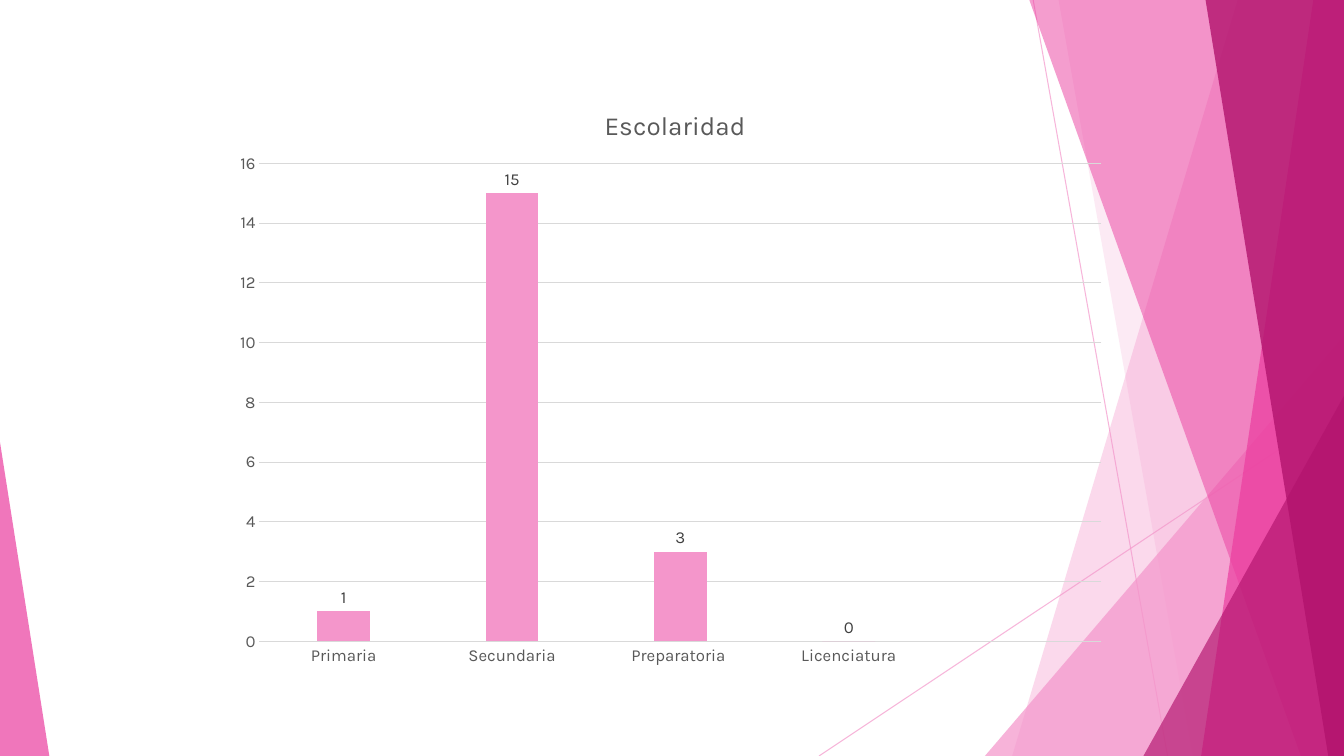
"""Build the Escolaridad column chart slide with its pink facet decoration."""
from dataclasses import dataclass

from lxml.etree import SubElement
from pptx import Presentation
from pptx.chart.chart import Chart
from pptx.chart.data import CategoryChartData
from pptx.dml.color import RGBColor
from pptx.enum.chart import XL_CHART_TYPE, XL_LABEL_POSITION, XL_TICK_MARK
from pptx.enum.shapes import MSO_CONNECTOR, MSO_SHAPE
from pptx.oxml.ns import qn
from pptx.oxml.xmlchemy import BaseOxmlElement
from pptx.shapes.autoshape import Shape
from pptx.slide import Slide
from pptx.text.text import Font
from pptx.util import Emu, Pt

WIDTH, HEIGHT = 1280, 720


@dataclass(frozen=True)
class Theme:
    font: str = "Karla"
    light: str = "F496CB"
    bright: str = "EB3D9F"
    deep: str = "B2136D"
    grid: str = "D9D9D9"
    axis_text: str = "595959"
    value_text: str = "404040"
    title_size: float = 18.6
    label_size: float = 12
    line_width: float = 0.75


THEME = Theme()


@dataclass(frozen=True)
class Ray:
    start: tuple[int, int]
    end: tuple[int, int]


@dataclass(frozen=True)
class Facet:
    top: int
    bottom: int
    color: str
    opacity: int


@dataclass(frozen=True)
class Triangle:
    left: int
    top: int
    width: int
    apex: float
    color: str
    opacity: int


RAYS = [Ray((984, 0), (1112, HEIGHT)), Ray((WIDTH, 387), (780, HEIGHT))]
RAY_OPACITY = 70
FACETS = [
    Facet(1179, 964, THEME.light, 36),
    Facet(1008, 1136, THEME.light, 20),
    Triangle(938, 320, 342, 1, THEME.light, 72),
    Facet(980, 1239, THEME.bright, 50),
    Facet(1251, 1144, THEME.bright, 70),
    Facet(1148, 1265, THEME.deep, 80),
    Triangle(1089, 377, 191, 1, THEME.deep, 66),
    Triangle(0, 421, 47, 0, THEME.bright, 70),
]
SCHOOLING = {"Primaria": 1, "Secundaria": 15, "Preparatoria ": 3, "Licenciatura": 0, "": None}


def px(length: int) -> Emu:
    return Emu(length * 9525)


def set_opacity(element: BaseOxmlElement, percent: int) -> None:
    for color in element.iter(qn("a:srgbClr")):
        SubElement(color, qn("a:alpha"), val=str(percent * 1000))


def paint(shape: Shape, color: str, opacity: int) -> None:
    shape.shadow.inherit = False
    shape.fill.solid()
    shape.fill.fore_color.rgb = RGBColor.from_string(color)
    shape.line.fill.background()
    set_opacity(shape.element, opacity)


def draw_ray(slide: Slide, ray: Ray) -> None:
    connector = slide.shapes.add_connector(
        MSO_CONNECTOR.STRAIGHT, *map(px, ray.start), *map(px, ray.end))
    connector.line.color.rgb = RGBColor.from_string(THEME.light)
    connector.line.width = Pt(THEME.line_width)
    set_opacity(connector.element, RAY_OPACITY)
    SubElement(connector.element.spPr, qn("a:effectLst"))


def draw_facet(slide: Slide, facet: Facet) -> None:
    builder = slide.shapes.build_freeform(facet.top, -1, scale=px(1))
    builder.add_line_segments([(WIDTH, -1), (WIDTH, HEIGHT), (facet.bottom, HEIGHT)])
    paint(builder.convert_to_shape(), facet.color, facet.opacity)


def draw_triangle(slide: Slide, triangle: Triangle) -> None:
    shape = slide.shapes.add_shape(
        MSO_SHAPE.ISOSCELES_TRIANGLE, px(triangle.left), px(triangle.top),
        px(triangle.width), px(HEIGHT - triangle.top))
    shape.adjustments[0] = triangle.apex
    paint(shape, triangle.color, triangle.opacity)


def style_font(font: Font, size: float, color: str) -> None:
    font.name = THEME.font
    font.size = Pt(size)
    font.bold = False
    font.color.rgb = RGBColor.from_string(color)


def set_layout(parent: BaseOxmlElement, index: int, **settings: str | float) -> None:
    for previous in parent.findall(qn("c:layout")):
        parent.remove(previous)
    layout = SubElement(parent, qn("c:layout"))
    parent.insert(index, layout)
    manual = SubElement(layout, qn("c:manualLayout"))
    for name, value in settings.items():
        SubElement(manual, qn(f"c:{name}"), val=str(value))


def style_axes(chart: Chart) -> None:
    grid_color = RGBColor.from_string(THEME.grid)
    for axis in (chart.category_axis, chart.value_axis):
        axis.major_tick_mark = axis.minor_tick_mark = XL_TICK_MARK.NONE
        style_font(axis.tick_labels.font, THEME.label_size, THEME.axis_text)
    chart.value_axis.minimum_scale = 0
    chart.value_axis.maximum_scale = 16
    chart.value_axis.major_unit = 2
    chart.value_axis.format.line.fill.background()
    for line in (chart.category_axis.format.line, chart.value_axis.major_gridlines.format.line):
        line.color.rgb = grid_color
        line.width = Pt(THEME.line_width)


def style_columns(chart: Chart) -> None:
    plot = chart.plots[0]
    plot.vary_by_categories = False
    plot.gap_width = 219
    plot.overlap = -27
    series = plot.series[0]
    series.format.fill.solid()
    series.format.fill.fore_color.rgb = RGBColor.from_string(THEME.light)
    labels = series.data_labels
    labels.show_value = True
    labels.position = XL_LABEL_POSITION.OUTSIDE_END
    style_font(labels.font, THEME.label_size, THEME.value_text)


def draw_chart(slide: Slide) -> None:
    data = CategoryChartData()
    data.categories = list(SCHOOLING)
    data.add_series("Series 1", list(SCHOOLING.values()))
    chart = slide.shapes.add_chart(
        XL_CHART_TYPE.COLUMN_CLUSTERED, px(213), px(76), px(853), px(569), data).chart
    style_font(chart.font, 10, "000000")
    chart.has_legend = False
    chart.has_title = True
    paragraph = chart.chart_title.text_frame.paragraphs[0]
    paragraph.text = "Escolaridad"
    style_font(paragraph.font, THEME.title_size, THEME.axis_text)
    set_layout(chart.chart_title.element, 1, xMode="edge", yMode="edge", x=0.42, y=0.04)
    plot_area = chart.element.find(".//" + qn("c:plotArea"))
    set_layout(plot_area, 0, layoutTarget="inner", xMode="edge", yMode="edge",
               x=0.04, y=0.14, w=0.94, h=0.8)
    style_axes(chart)
    style_columns(chart)


def main() -> None:
    presentation = Presentation()
    presentation.slide_width, presentation.slide_height = px(WIDTH), px(HEIGHT)
    slide = presentation.slides.add_slide(presentation.slide_layouts[6])
    for ray in RAYS:
        draw_ray(slide, ray)
    for facet in FACETS:
        if isinstance(facet, Triangle):
            draw_triangle(slide, facet)
        else:
            draw_facet(slide, facet)
    draw_chart(slide)
    presentation.save("out.pptx")


if __name__ == "__main__":
    main()
